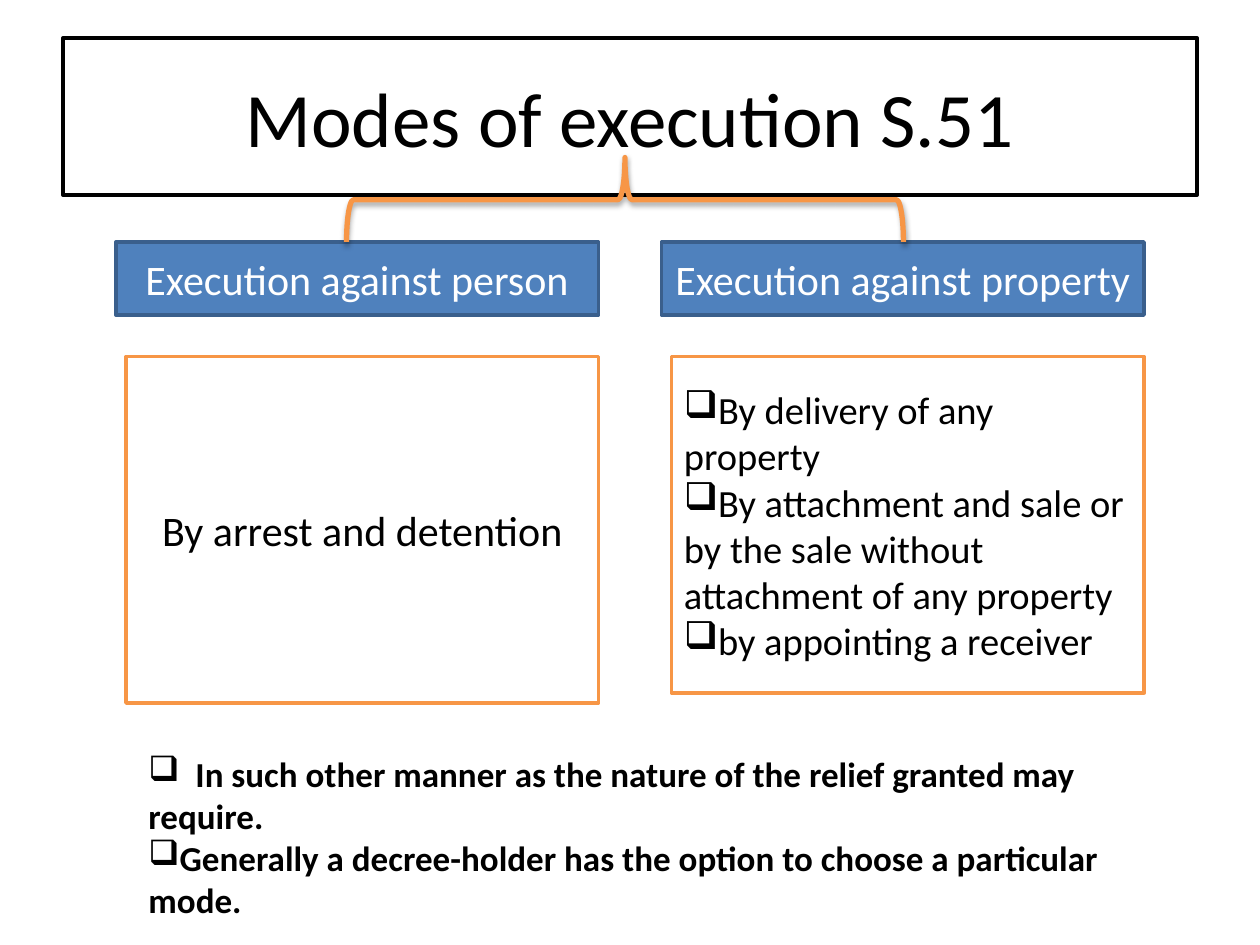
from lxml.etree import SubElement
from pptx import Presentation
from pptx.dml.color import RGBColor
from pptx.enum.shapes import MSO_SHAPE
from pptx.enum.text import MSO_ANCHOR, MSO_AUTO_SIZE, PP_ALIGN
from pptx.oxml.ns import qn
from pptx.util import Inches, Pt

COLORS = {"paper": "FFFFFF", "ink": "000000", "heading": "4F81BD",
          "heading_edge": "3A5F8C", "accent": "F79646"}

PERSON = ["By arrest and detention"]
PROPERTY = [
    "By delivery of any property",
    "By attachment and sale or by the sale without attachment of any property",
    "by appointing a receiver",
]
REMARKS = [
    "  In such other manner as the nature of the relief granted may require.",
    "Generally a decree-holder has the option to choose a particular mode.",
]


def color(name):
    return RGBColor.from_string(COLORS[name])


def apply(target, values):
    for attribute, value in values.items():
        setattr(target, attribute, value)


def place(part, left, top, width, height):
    apply(part, {"left": Inches(left), "top": Inches(top),
                 "width": Inches(width), "height": Inches(height)})


def paint(part, edge, weight=2, fill=None):
    if fill:
        part.fill.solid()
        part.fill.fore_color.rgb = color(fill)
    part.line.color.rgb = color(edge)
    part.line.width = Pt(weight)


def write(part, lines, size, ink="ink", align=PP_ALIGN.CENTER, bold=False,
          bullet=None, anchor=MSO_ANCHOR.MIDDLE):
    frame = part.text_frame
    apply(frame, {"word_wrap": True, "vertical_anchor": anchor})
    frame.text = "\n".join(lines)
    for paragraph in frame.paragraphs:
        paragraph.alignment = align
        run = paragraph.runs[0]
        apply(run.font, {"name": "Calibri", "size": Pt(size), "bold": bold})
        run.font.color.rgb = color(ink)
        if bullet:
            SubElement(paragraph._p.get_or_add_pPr(), qn("a:buChar"), char=bullet)


def add_box(slide, box, edge, fill):
    panel = slide.shapes.add_shape(MSO_SHAPE.RECTANGLE, *map(Inches, box))
    panel.shadow.inherit = False
    paint(panel, edge, fill=fill)
    return panel


def add_title(slide, left, top, width, height):
    title = slide.shapes.title
    place(title, left, top, width, height)
    paint(title, "ink", fill="paper")
    write(title, ["Modes of execution S.51"], 44)


def add_mode(slide, left, top, heading, lines, inset, panel_height, **style):
    """A heading bar with its panel below, both ending at the same right edge."""
    width, bar_height, panel_offset = 3.83, 0.58, 0.91
    bar = add_box(slide, (left, top, width, bar_height), "heading_edge", "heading")
    write(bar, [heading], 24, ink="paper")
    panel = add_box(slide, (left + inset, top + panel_offset, width - inset, panel_height),
                    "accent", "paper")
    write(panel, lines, **style)


def add_brace(slide, left, top, width, height):
    """An upward brace: a right brace turned a quarter to the left."""
    brace = slide.shapes.add_shape(
        MSO_SHAPE.RIGHT_BRACE,
        Inches(left + (width - height) / 2), Inches(top + (height - width) / 2),
        Inches(height), Inches(width))
    brace.rotation = 270
    brace.fill.background()
    paint(brace, "accent", weight=3)
    # Soft shadow straight below
    brace.shadow.inherit = False
    effects = brace._element.spPr.find(qn("a:effectLst"))
    shadow = SubElement(effects, qn("a:outerShdw"), blurRad=str(Pt(3.1)),
                        dist=str(Pt(1.8)), dir="5400000", rotWithShape="0")
    shade = SubElement(shadow, qn("a:srgbClr"), val=COLORS["ink"])
    SubElement(shade, qn("a:alpha"), val="35000")


def add_remarks(slide, left, top, width, height):
    remarks = slide.shapes.add_textbox(*map(Inches, (left, top, width, height)))
    write(remarks, REMARKS, 20, align=PP_ALIGN.LEFT, bold=True, bullet="❑",
          anchor=MSO_ANCHOR.TOP)
    remarks.text_frame.auto_size = MSO_AUTO_SIZE.SHAPE_TO_FIT_TEXT


def main():
    deck = Presentation()
    apply(deck, {"slide_width": Inches(10), "slide_height": Inches(7.5)})
    slide = deck.slides.add_slide(deck.slide_layouts[5])

    add_title(slide, 0.5, 0.3, 9, 1.25)
    # The two modes, side by side
    add_mode(slide, 0.92, 1.92, "Execution against person", PERSON,
             inset=0.08, panel_height=2.75, size=24)
    add_mode(slide, 5.25, 1.92, "Execution against property", PROPERTY,
             inset=0.08, panel_height=2.67, size=22, align=PP_ALIGN.LEFT, bullet="❑")
    # Brace from the title to both headings
    add_brace(slide, 2.75, 1.25, 4.42, 0.67)
    add_remarks(slide, 1.08, 5.92, 8, 1.45)

    deck.save("out.pptx")


if __name__ == "__main__":
    main()
